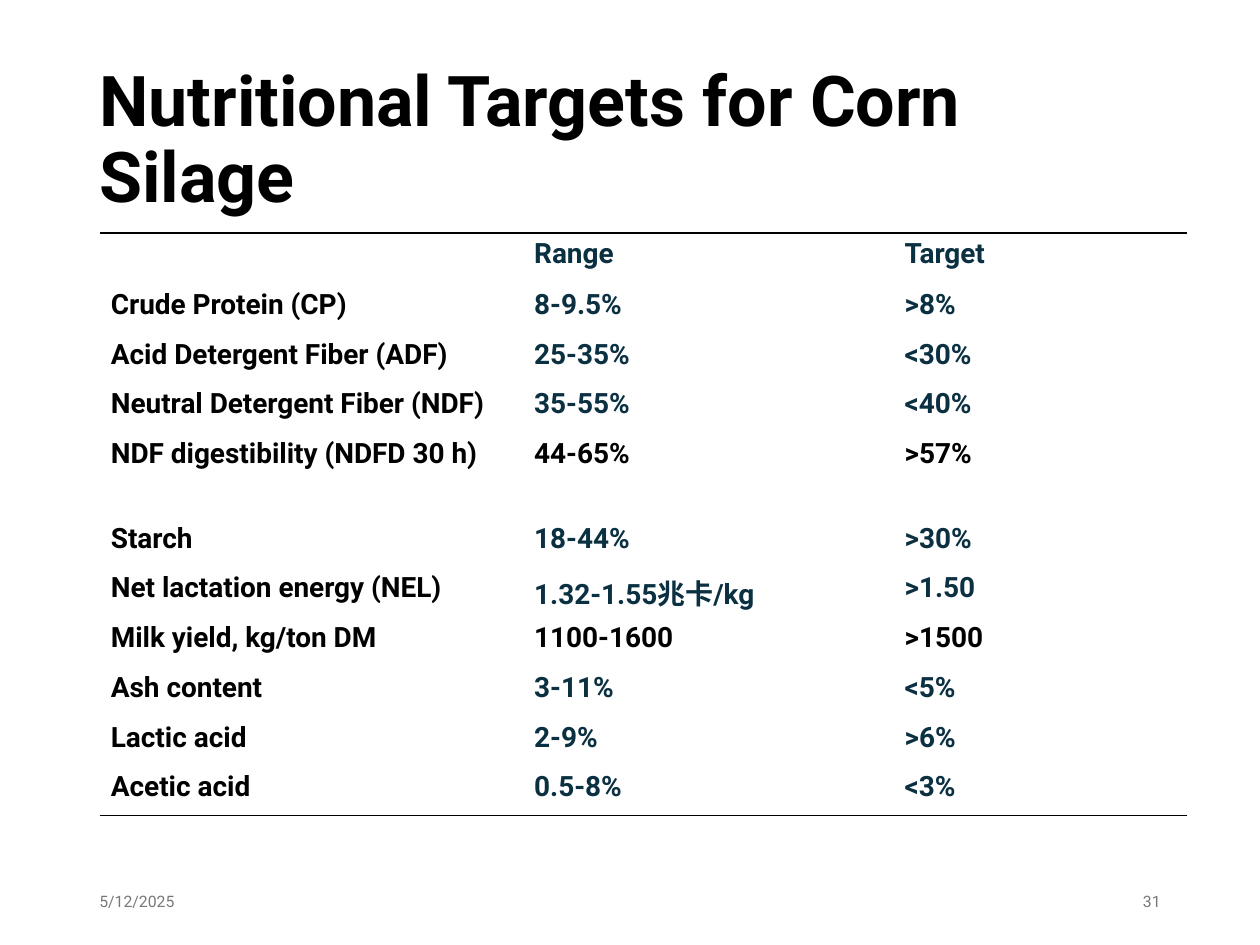
from lxml.etree import SubElement
from pptx import Presentation
from pptx.dml.color import RGBColor
from pptx.enum.text import MSO_ANCHOR, PP_ALIGN
from pptx.oxml.ns import qn
from pptx.util import Inches, Pt

BLACK = RGBColor(0x00, 0x00, 0x00)
NAVY = RGBColor(0x0B, 0x30, 0x41)
GRAY = RGBColor(0x79, 0x79, 0x79)
FONT = "Roboto"

TITLE = "Nutritional Targets for Corn Silage"
DATE, PAGE = "5/12/2025", "31"
# label, range, target, colour of the values
TARGETS = [
    ("", "Range", "Target", NAVY),
    ("Crude Protein (CP)", "8-9.5%", ">8%", NAVY),
    ("Acid Detergent Fiber (ADF)", "25-35%", "<30%", NAVY),
    ("Neutral Detergent Fiber (NDF)", "35-55%", "<40%", NAVY),
    ("NDF digestibility (NDFD 30 h)", "44-65%", ">57%", BLACK),
    ("Starch", "18-44%", ">30%", NAVY),
    ("Net lactation energy (NEL)", "1.32-1.55兆卡/kg", ">1.50", NAVY),
    ("Milk yield, kg/ton DM", "1100-1600", ">1500", BLACK),
    ("Ash content", "3-11%", "<5%", NAVY),
    ("Lactic acid", "2-9%", ">6%", NAVY),
    ("Acetic acid", "0.5-8%", "<3%", NAVY),
]
COLUMN_WIDTHS = (3.36, 2.94, 2.33)
TABLE_HEIGHT = 4.62
TALL_ROW, TALL_HEIGHT = 4, 0.67
PLAIN_TABLE_STYLE = "{2D5ABB26-0587-4C30-8999-92F81FD0307C}"


def style(paragraph, size, color, bold=False):
    font = paragraph.font
    font.name, font.size, font.bold = FONT, Pt(size), bold
    font.color.rgb = color


def add_text(slide, text, box, size, color, bold=False):
    """Add a vertically centred text box and return its paragraph."""
    frame = slide.shapes.add_textbox(*map(Inches, box)).text_frame
    frame.word_wrap = True
    frame.vertical_anchor = MSO_ANCHOR.MIDDLE
    paragraph = frame.paragraphs[0]
    paragraph.text = text
    style(paragraph, size, color, bold)
    return paragraph


def add_border(cell, side):
    """Draw a 1 pt black rule on one side: lnT is top, lnB is bottom."""
    properties = cell._tc.get_or_add_tcPr()
    line = SubElement(properties, qn(f"a:{side}"), w=str(Pt(1)))
    properties.insert(0, line)
    fill = SubElement(line, qn("a:solidFill"))
    SubElement(fill, qn("a:srgbClr"), val=str(BLACK))


def add_targets(slide):
    table = slide.shapes.add_table(
        len(TARGETS), len(COLUMN_WIDTHS), Inches(0.79), Inches(1.85),
        Inches(sum(COLUMN_WIDTHS)), Inches(TABLE_HEIGHT)).table
    table.first_row = table.horz_banding = False
    table._tbl.tblPr.find(qn("a:tableStyleId")).text = PLAIN_TABLE_STYLE
    for column, width in zip(table.columns, COLUMN_WIDTHS):
        column.width = Inches(width)

    last = len(TARGETS) - 1
    row_height = (TABLE_HEIGHT - TALL_HEIGHT) / last
    for r, (*texts, value_color) in enumerate(TARGETS):
        table.rows[r].height = Inches(TALL_HEIGHT if r == TALL_ROW else row_height)
        for c, text in enumerate(texts):
            cell = table.cell(r, c)
            cell.fill.background()
            if text:
                cell.margin_left = cell.margin_right = Inches(0.09)
                cell.margin_top = cell.margin_bottom = Inches(0.04)
                cell.text = text
                style(cell.text_frame.paragraphs[0], 16,
                      value_color if c else BLACK, bold=True)
            if r == 0:
                add_border(cell, "lnT")
            elif r == last:
                add_border(cell, "lnB")


def main():
    deck = Presentation()
    deck.slide_width, deck.slide_height = Inches(10), Inches(7.5)
    slide = deck.slides.add_slide(deck.slide_layouts[6])

    title = add_text(slide, TITLE, (0.69, 0.4, 8.62, 1.45), 40, BLACK, bold=True)
    title.line_spacing = 0.9
    add_text(slide, DATE, (0.69, 6.95, 2.25, 0.4), 9, GRAY)
    page = add_text(slide, PAGE, (7.06, 6.95, 2.25, 0.4), 9, GRAY)
    page.alignment = PP_ALIGN.RIGHT
    add_targets(slide)

    deck.save("out.pptx")


if __name__ == "__main__":
    main()
